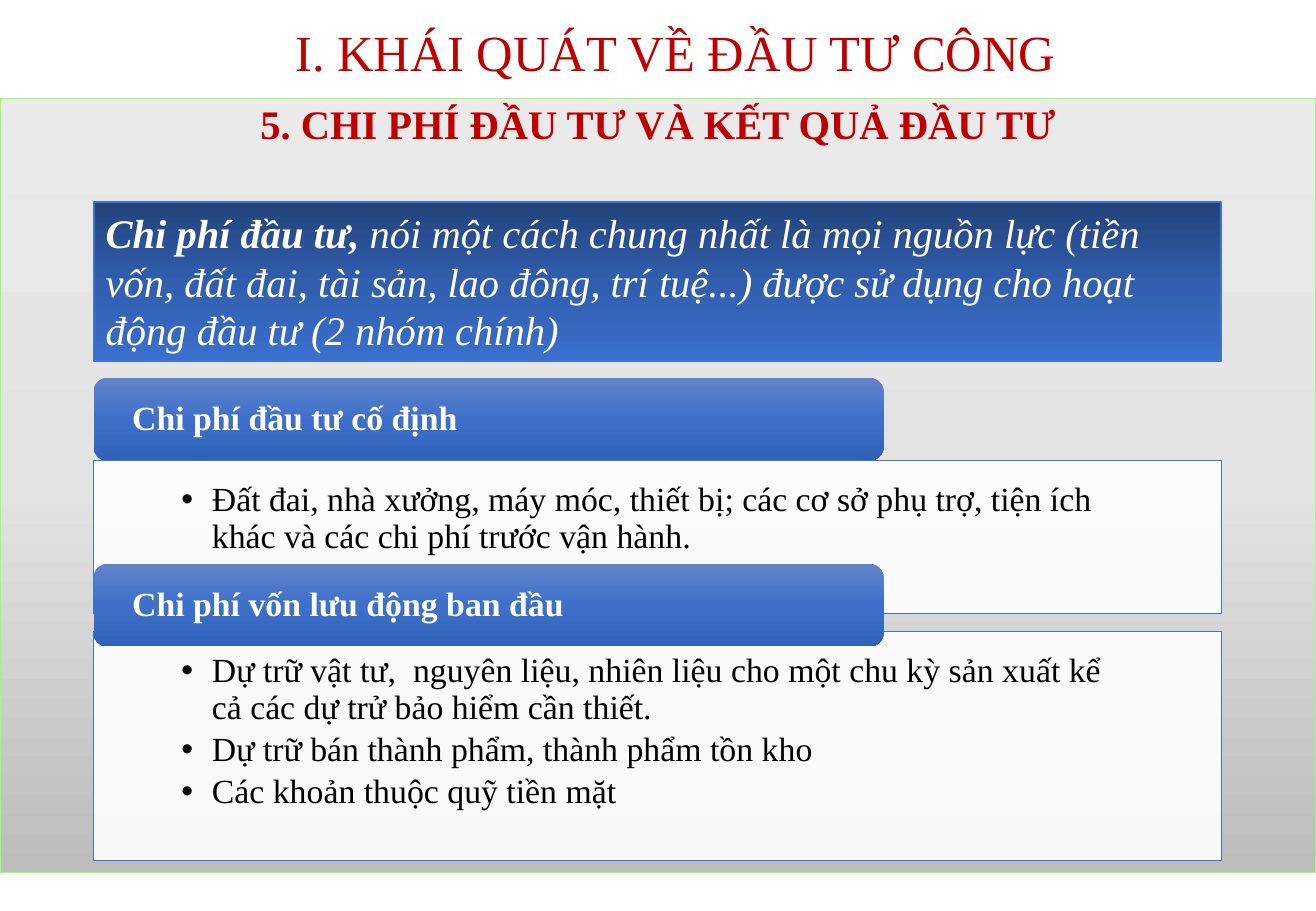
"""Build the slide on investment costs."""
from copy import deepcopy

from lxml.etree import SubElement
from pptx import Presentation
from pptx.dml.color import RGBColor
from pptx.enum.shapes import MSO_SHAPE
from pptx.enum.text import MSO_ANCHOR, PP_ALIGN
from pptx.oxml.ns import qn
from pptx.util import Cm, Pt

TITLE = "I. KHÁI QUÁT VỀ ĐẦU TƯ CÔNG"
SUBTITLE = "5. CHI PHÍ ĐẦU TƯ VÀ KẾT QUẢ ĐẦU TƯ"
TERM = "Chi phí đầu tư, "
MEANING = (
    "nói một cách chung nhất là mọi nguồn lực (tiền vốn, đất đai, tài sản, "
    "lao đông, trí tuệ...) được sử dụng cho hoạt động đầu tư (2 nhóm chính)"
)
# Each group: heading, heading top, panel top, panel height, points
GROUPS = [
    ("Chi phí đầu tư cố định", 7.9, 9.63, 3.2, [
        "Đất đai, nhà xưởng, máy móc, thiết bị; các cơ sở phụ trợ, tiện ích "
        "khác và các chi phí trước vận hành.",
    ]),
    ("Chi phí vốn lưu động ban đầu", 11.79, 13.21, 4.78, [
        "Dự trữ vật tư,  nguyên liệu, nhiên liệu cho một chu kỳ sản xuất kể "
        "cả các dự trử bảo hiểm cần thiết.",
        "Dự trữ bán thành phẩm, thành phẩm tồn kho",
        "Các khoản thuộc quỹ tiền mặt",
    ]),
]

FONT = "Times New Roman"
RED = RGBColor(0xC0, 0x00, 0x00)
WHITE = RGBColor(0xFF, 0xFF, 0xFF)
BLACK = RGBColor(0x00, 0x00, 0x00)
BLUE = RGBColor(0x44, 0x72, 0xC4)
GREEN = RGBColor(0x99, 0xFF, 0x66)
GREYS = [RGBColor(0xEB, 0xEA, 0xEA), RGBColor(0xE4, 0xE3, 0xE3), RGBColor(0xBD, 0xBC, 0xBC)]
NAVYS = [RGBColor(0x23, 0x42, 0x7A), RGBColor(0x31, 0x5E, 0xAD), RGBColor(0x3A, 0x6F, 0xCE)]
BLUES = [RGBColor(0x61, 0x83, 0xCB), RGBColor(0x3E, 0x70, 0xCA), RGBColor(0x30, 0x62, 0xBB)]

WIDTH, HEIGHT = 27.51, 19.05
LEFT, WIDE = 1.96, 23.57
HEAD_W, HEAD_H = 16.51, 1.73


def add_box(slide, kind, left, top, width, height, line=None, weight=1):
    box = slide.shapes.add_shape(kind, Cm(left), Cm(top), Cm(width), Cm(height))
    box.shadow.inherit = False
    if line is None:
        box.line.fill.background()
    else:
        box.line.color.rgb = line
        box.line.width = Pt(weight)
    return box


def shade(box, colors):
    box.fill.gradient()
    box.fill.gradient_angle = 270
    stops = box.element.spPr.find(qn("a:gradFill")).find(qn("a:gsLst"))
    stops.insert(1, deepcopy(stops[0]))
    for i, (stop, color) in enumerate(zip(box.fill.gradient_stops, colors)):
        stop.position = i / 2
        stop.color.rgb = color


def inset(frame, side, top, bottom, anchor):
    frame.word_wrap = True
    frame.margin_left = frame.margin_right = Cm(side)
    frame.margin_top, frame.margin_bottom = Cm(top), Cm(bottom)
    frame.vertical_anchor = anchor


def style(para, size, color, bold=None, align=PP_ALIGN.LEFT, spacing=0.9):
    para.alignment = align
    para.line_spacing = spacing
    para.font.name, para.font.size = FONT, Pt(size)
    para.font.color.rgb = color
    para.font.bold = bold


def bullet(para):
    props = para._p.get_or_add_pPr()
    props.set("marL", str(Cm(0.64)))
    props.set("indent", str(-Cm(0.64)))
    SubElement(props, qn("a:buFont")).set("typeface", "Arial")
    SubElement(props, qn("a:buChar")).set("char", "•")


def add_panel(slide, top, height, points):
    panel = add_box(slide, MSO_SHAPE.RECTANGLE, LEFT, top, WIDE, height, BLUE, 0.5)
    panel.fill.solid()
    panel.fill.fore_color.rgb = WHITE
    color = panel.element.spPr.find(qn("a:solidFill"))[0]
    SubElement(color, qn("a:alpha")).set("val", "90000")
    frame = panel.text_frame
    inset(frame, 1.83, 0.46, 0.41, MSO_ANCHOR.TOP)
    for i, point in enumerate(points):
        para = frame.add_paragraph() if i else frame.paragraphs[0]
        para.text = point
        style(para, 20, BLACK)
        para.space_after = Pt(3.5)
        bullet(para)


def add_head(slide, top, text):
    head = add_box(slide, MSO_SHAPE.ROUNDED_RECTANGLE, LEFT, top, HEAD_W, HEAD_H)
    shade(head, BLUES)
    inset(head.text_frame, 0.72, 0, 0, MSO_ANCHOR.MIDDLE)
    head.text_frame.text = text
    style(head.text_frame.paragraphs[0], 20, WHITE, True)


def main():
    deck = Presentation()
    deck.slide_width, deck.slide_height = Cm(WIDTH), Cm(HEIGHT)
    slide = deck.slides.add_slide(deck.slide_layouts[5])

    title = slide.shapes.title
    title.left, title.top, title.width, title.height = Cm(1.45), Cm(0.4), Cm(25.35), Cm(1.5)
    inset(title.text_frame, 0.25, 0.13, 0.13, MSO_ANCHOR.MIDDLE)
    title.text_frame.text = TITLE
    style(title.text_frame.paragraphs[0], 30, RED, align=PP_ALIGN.CENTER)

    body = add_box(slide, MSO_SHAPE.RECTANGLE, 0, 2.06, WIDTH, 16.18, GREEN, 0.75)
    shade(body, GREYS)
    inset(body.text_frame, 0.25, 0.13, 0.13, MSO_ANCHOR.TOP)
    body.text_frame.text = SUBTITLE
    style(body.text_frame.paragraphs[0], 24, RED, True, PP_ALIGN.CENTER)

    intro = add_box(slide, MSO_SHAPE.RECTANGLE, LEFT, 4.22, WIDE, 3.33, BLUE)
    shade(intro, NAVYS)
    inset(intro.text_frame, 0.25, 0.13, 0.13, MSO_ANCHOR.TOP)
    para = intro.text_frame.paragraphs[0]
    style(para, 24, WHITE, spacing=1.0)
    para.font.italic = True
    for text, bold in ((TERM, True), (MEANING, False)):
        run = para.add_run()
        run.text, run.font.bold = text, bold

    for text, head_top, top, height, points in GROUPS:
        add_panel(slide, top, height, points)
        add_head(slide, head_top, text)

    deck.save("out.pptx")


if __name__ == "__main__":
    main()
